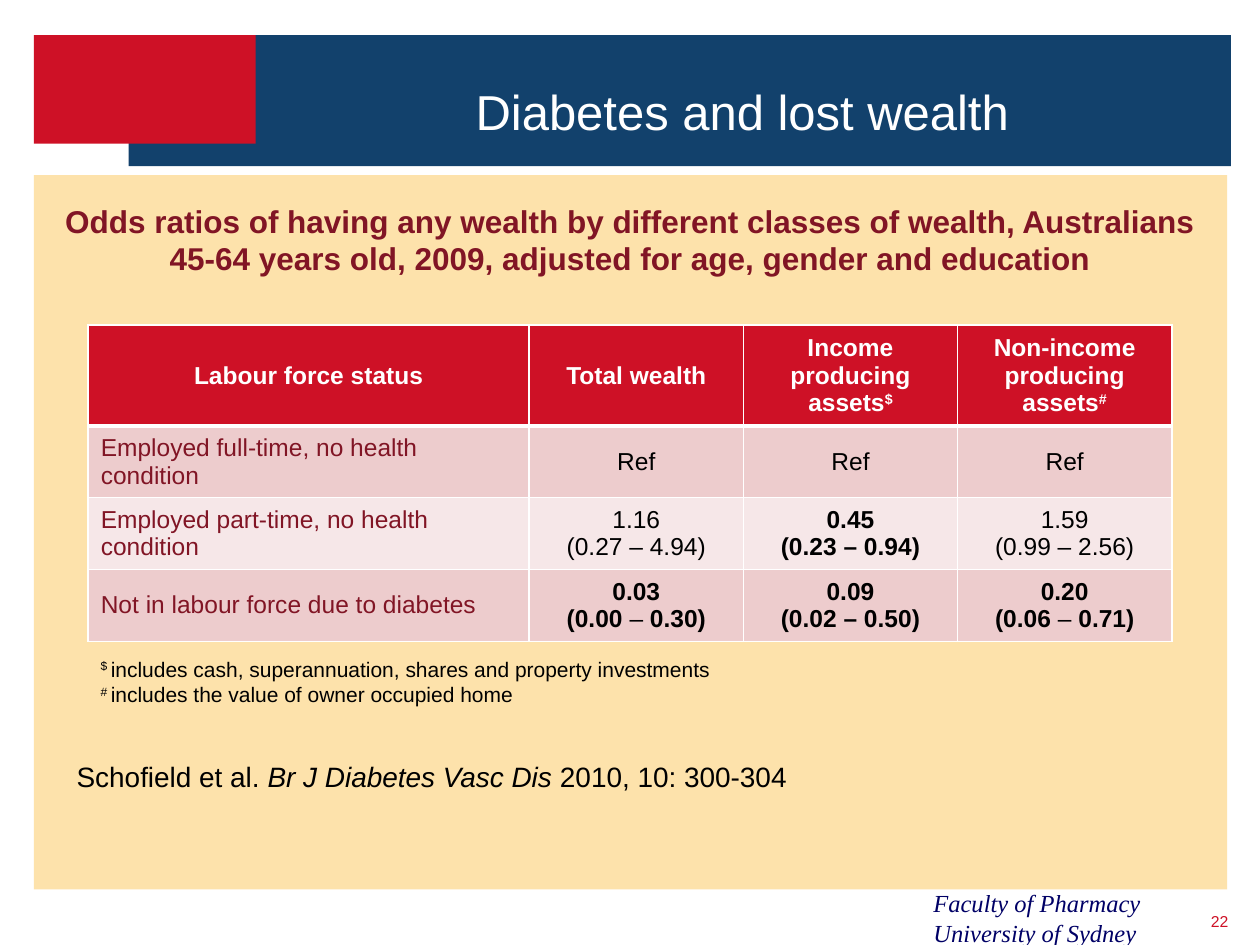
from lxml.etree import SubElement
from pptx import Presentation
from pptx.dml.color import RGBColor
from pptx.enum.shapes import MSO_SHAPE
from pptx.enum.text import MSO_ANCHOR, PP_ALIGN
from pptx.oxml.ns import qn
from pptx.util import Inches, Pt

NAVY = RGBColor(0x12, 0x41, 0x6C)
RED = RGBColor(0xCE, 0x11, 0x26)
SAND = RGBColor(0xFD, 0xE2, 0xAB)
MAROON = RGBColor(0x81, 0x15, 0x25)
INK = RGBColor(0x00, 0x00, 0x66)
BLACK = RGBColor(0, 0, 0)
WHITE = RGBColor(0xFF, 0xFF, 0xFF)
PINK = RGBColor(0xED, 0xCC, 0xCD)
PALE_PINK = RGBColor(0xF6, 0xE7, 0xE8)

BOLD = {"bold": True}
ITALIC = {"italic": True}
RAISED = {"raised": True}


def write(frame, paragraphs, size=14, color=BLACK, font="Arial", bold=False,
          italic=False, align=PP_ALIGN.LEFT, line_spacing=None):
    for index, runs in enumerate(paragraphs):
        paragraph = frame.paragraphs[0] if index == 0 else frame.add_paragraph()
        paragraph.alignment = align
        if line_spacing:
            paragraph.line_spacing = line_spacing
        for words, change in [(runs, {})] if isinstance(runs, str) else runs:
            run = paragraph.add_run()
            run.text = words
            run.font.size = Pt(size)
            run.font.name = font
            run.font.color.rgb = color
            run.font.bold = change.get("bold", bold)
            run.font.italic = change.get("italic", italic)
            if change.get("raised"):
                run._r.get_or_add_rPr().set("baseline", "30000")


def add_text(slide, box, paragraphs, anchor=MSO_ANCHOR.TOP, wrap=True,
             inset=True, **text_format):
    frame = slide.shapes.add_textbox(*map(Inches, box)).text_frame
    frame.word_wrap = wrap
    frame.vertical_anchor = anchor
    if not inset:
        frame.margin_left = frame.margin_right = 0
        frame.margin_top = frame.margin_bottom = 0
    write(frame, paragraphs, **text_format)


def add_block(slide, box, color):
    block = slide.shapes.add_shape(MSO_SHAPE.RECTANGLE, *map(Inches, box))
    block.shadow.inherit = False
    block.fill.solid()
    block.fill.fore_color.rgb = color
    block.line.fill.background()


def add_banner(slide, box):
    left, top, width, height = box
    add_block(slide, (left + 0.75, top, width - 0.75, height), NAVY)
    add_block(slide, (left, top, 1.76, 0.86), RED)
    add_text(slide, (left + 1.76, top + 0.19, width - 1.78, 0.69),
             ["Diabetes and lost wealth"], anchor=MSO_ANCHOR.BOTTOM, size=28,
             color=WHITE, align=PP_ALIGN.CENTER, line_spacing=Pt(25))


def set_borders(cell, top, bottom):
    properties = cell._tc.get_or_add_tcPr()
    for side, points in (("L", 1), ("R", 1), ("T", top), ("B", bottom)):
        border = SubElement(properties, qn(f"a:ln{side}"), w=str(Pt(points)))
        fill = SubElement(border, qn("a:solidFill"))
        SubElement(fill, qn("a:srgbClr"), val=str(WHITE))


def add_odds_table(slide, box):
    header = [
        ["Labour force status"],
        ["Total wealth"],
        [[("Income producing assets", {}), ("$", RAISED)]],
        [[("Non-income producing assets", {}), ("#", RAISED)]],
    ]
    body = [
        [["Employed full-time, no health condition"], ["Ref"], ["Ref"], ["Ref"]],
        [["Employed part-time, no health condition"],
         ["1.16", "(0.27 – 4.94)"],
         [[("0.45", BOLD)], [("(0.23 – 0.94)", BOLD)]],
         ["1.59", "(0.99 – 2.56)"]],
        [["Not in labour force due to diabetes"],
         [[("0.03", BOLD)], [("(0.00 ", BOLD), ("–", {}), (" 0.30)", BOLD)]],
         [[("0.09", BOLD)], [("(0.02 – 0.50)", BOLD)]],
         [[("0.20", BOLD)], [("(0.06 ", BOLD), ("–", {}), (" 0.71)", BOLD)]]],
    ]
    rows = [header] + body
    odds = slide.shapes.add_table(len(rows), len(header), *map(Inches, box)).table
    for column, width in zip(odds.columns, (3.5, 1.7, 1.7, 1.7)):
        column.width = Inches(width)
    for row, height in zip(odds.rows, (0.8, 0.57, 0.57, 0.57)):
        row.height = Inches(height)
    for r, entries in enumerate(rows):
        for c, entry in enumerate(entries):
            cell = odds.cell(r, c)
            is_header, is_status = r == 0, c == 0
            set_borders(cell, 3 if r == 1 else 1, 3 if is_header else 1)
            cell.fill.solid()
            cell.fill.fore_color.rgb = (RED, PINK, PALE_PINK, PINK)[r]
            cell.vertical_anchor = MSO_ANCHOR.MIDDLE
            color = WHITE if is_header else MAROON if is_status else BLACK
            align = PP_ALIGN.LEFT if is_status and not is_header else PP_ALIGN.CENTER
            write(cell.text_frame, entry, color=color, bold=is_header, align=align)


def add_findings(slide, box):
    left, top, width, height = box
    add_block(slide, box, SAND)
    add_text(slide, (left + 0.12, top + 0.16, width - 0.25, 0.71),
             ["Odds ratios of having any wealth by different classes of wealth, "
              "Australians 45-64 years old, 2009, adjusted for age, gender and "
              "education"],
             size=18, color=MAROON, bold=True, align=PP_ALIGN.CENTER)
    add_odds_table(slide, (left + 0.43, top + 1.19, 8.6, 2.5))
    add_text(slide, (left + 0.43, top + 3.77, 5.09, 0.64),
             [[("$ ", RAISED),
               ("includes cash, superannuation, shares and property investments", {})],
              [("# ", RAISED), ("includes the value of owner occupied home", {})]],
             size=12)
    add_text(slide, (left + 0.24, top + 4.59, 5.91, 0.64),
             [[("Schofield et al. ", {}), ("Br J Diabetes Vasc Dis ", ITALIC),
               ("2010, 10: 300-304", {})]], size=16, wrap=False)


def add_footer(slide, box):
    left, top, width, height = box
    add_text(slide, (left, top, width - 0.11, height),
             ["Faculty of Pharmacy", "University of Sydney"],
             font="Times New Roman", color=INK, italic=True)
    add_text(slide, (left + width - 0.27, top + 0.2, 0.27, 0.23), ["22"],
             anchor=MSO_ANCHOR.MIDDLE, inset=False, size=9, color=RED,
             align=PP_ALIGN.RIGHT)


def main():
    deck = Presentation()
    deck.slide_width, deck.slide_height = Inches(10), Inches(7.5)
    slide = deck.slides.add_slide(deck.slide_layouts[6])
    add_banner(slide, (0.27, 0.28, 9.5, 1.04))
    add_findings(slide, (0.27, 1.39, 9.47, 5.67))
    add_footer(slide, (7.31, 7, 2.44, 0.57))
    deck.save("out.pptx")


if __name__ == "__main__":
    main()
